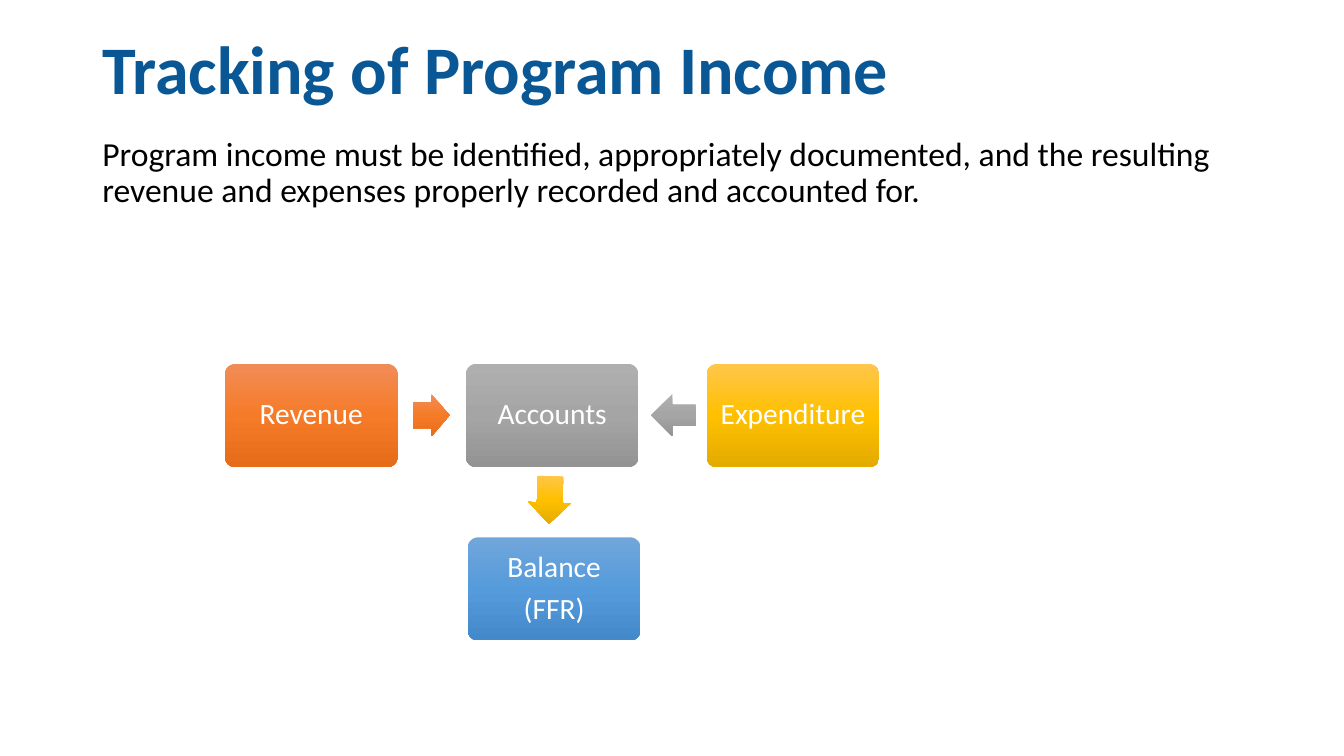
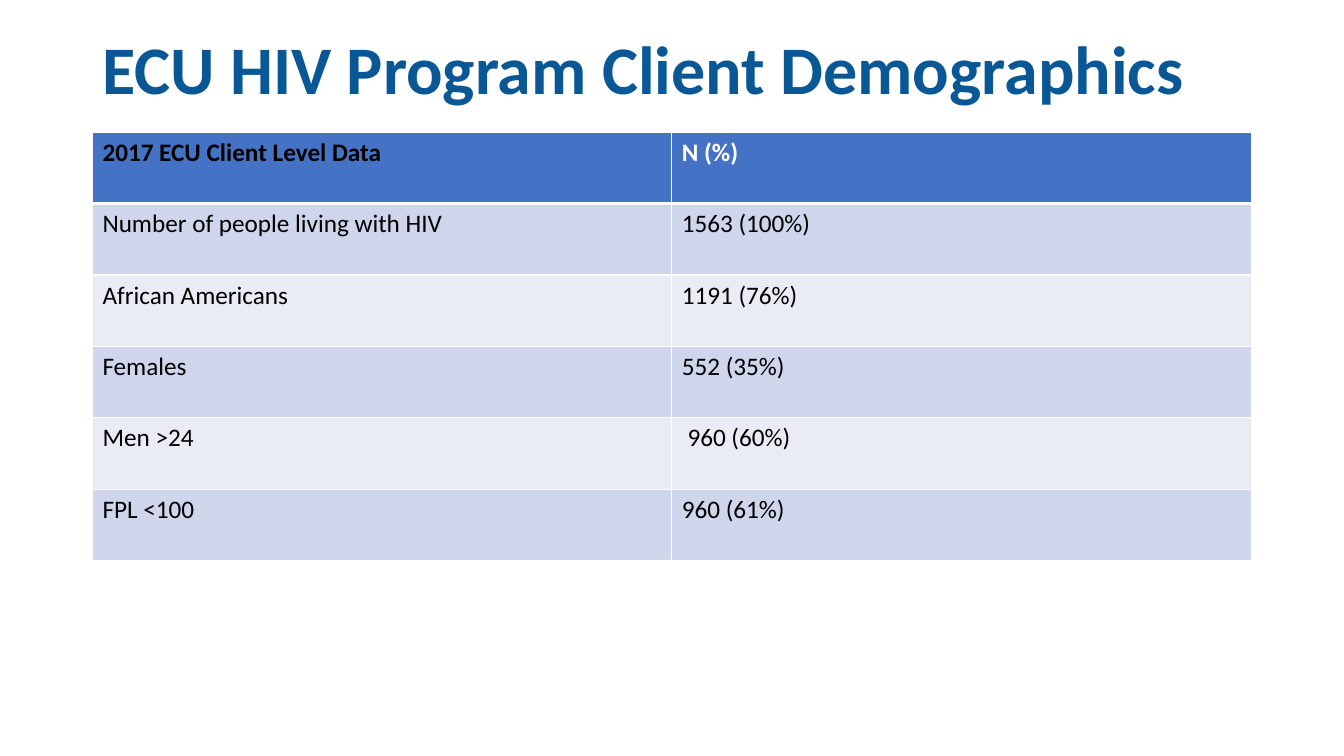
from dataclasses import dataclass

from lxml.etree import SubElement
from pptx import Presentation
from pptx.dml.color import RGBColor
from pptx.enum.shapes import MSO_SHAPE
from pptx.enum.text import MSO_ANCHOR, PP_ALIGN
from pptx.oxml.ns import qn
from pptx.util import Cm, Pt

FONT = "Calibri"
COLORS = {
    "title": "095895", "text": "000000", "white": "FFFFFF",
    "header": "4472C4", "band_dark": "CFD5EA", "band_light": "E9EBF5",
}
# Top, middle and bottom colour of each vertical gradient
GRADIENTS = {
    "orange": ("F18C57", "F67B28", "E56C19"),
    "gray": ("AFAFAF", "A5A5A5", "939393"),
    "gold": ("FFC64B", "FFC000", "E3AB00"),
    "blue": ("71A6DB", "559BDB", "448ACA"),
}

# Shared layout, in centimetres
LEFT, WIDTH = 2.33, 29.2
CONTENT_TOP = 3.33
BOX_W, BOX_H = 4.35, 2.6
BOX_LEFT, BOX_TOP, BOX_STEP = 5.67, 9.17, 6.07
ROW_H = 1.8


@dataclass
class Box:
    lines: tuple[str, ...]
    left: float
    top: float
    gradient: str


@dataclass
class Arrow:
    shape: MSO_SHAPE
    left: float
    top: float
    width: float
    height: float
    gradient: str
    shaft: float = 0.6
    rotation: float = 0


BOXES = [
    Box(("Revenue",), BOX_LEFT, BOX_TOP, "orange"),
    Box(("Accounts",), BOX_LEFT + BOX_STEP, BOX_TOP, "gray"),
    Box(("Expenditure",), BOX_LEFT + 2 * BOX_STEP, BOX_TOP, "gold"),
    Box(("Balance", "(FFR)"), 11.79, 13.54, "blue"),
]
ARROWS = [
    Arrow(MSO_SHAPE.RIGHT_ARROW, 10.41, 9.93, 0.92, 1.07, "orange"),
    Arrow(MSO_SHAPE.LEFT_ARROW, 16.41, 9.93, 1.12, 1.07, "gray", shaft=0.5),
    Arrow(MSO_SHAPE.DOWN_ARROW, 13.32, 12, 1.07, 1.2, "gold", rotation=1.8),
]
CLIENT_DATA = [
    ("2017 ECU Client Level Data", "N (%)"),
    ("Number of people living with HIV", "1563 (100%)"),
    ("African Americans", "1191 (76%)"),
    ("Females", "552 (35%)"),
    ("Men >24", " 960 (60%)"),
    ("FPL <100", "960 (61%)"),
]


def rgb(name: str) -> RGBColor:
    return RGBColor.from_string(COLORS[name])


def add_run(p, text: str, size: float, color: str, bold: bool = False) -> None:
    r = p.add_run()
    r.text = text
    r.font.name, r.font.size, r.font.bold = FONT, Pt(size), bold
    r.font.color.rgb = rgb(color)


def add_text(s, text: str, top: float, height: float, size: float, color: str,
             bold: bool = False, anchor: MSO_ANCHOR = MSO_ANCHOR.TOP) -> None:
    tf = s.shapes.add_textbox(Cm(LEFT), Cm(top), Cm(WIDTH), Cm(height)).text_frame
    tf.word_wrap = True
    tf.vertical_anchor = anchor
    p = tf.paragraphs[0]
    p.line_spacing = 0.9
    add_run(p, text, size, color, bold)


def new_slide(prs, title: str):
    s = prs.slides.add_slide(prs.slide_layouts[6])
    add_text(s, title, 0.66, 2.31, 48.6, "title", True, MSO_ANCHOR.MIDDLE)
    return s


def add_gradient_shape(s, shape: MSO_SHAPE, left: float, top: float,
                       width: float, height: float, gradient: str):
    sp = s.shapes.add_shape(shape, Cm(left), Cm(top), Cm(width), Cm(height))
    sp.shadow.inherit = False
    sp.line.fill.background()
    sp.fill.gradient()
    sp.fill.gradient_angle = 270
    # Three colour stops
    stops = sp._element.spPr.find(qn("a:gradFill")).find(qn("a:gsLst"))
    stops.clear()
    for pos, color in zip((0, 50000, 100000), GRADIENTS[gradient]):
        stop = SubElement(stops, qn("a:gs"), pos=str(pos))
        SubElement(stop, qn("a:srgbClr"), val=color)
    return sp


def add_box(s, box: Box) -> None:
    sp = add_gradient_shape(s, MSO_SHAPE.ROUNDED_RECTANGLE, box.left, box.top,
                            BOX_W, BOX_H, box.gradient)
    sp.adjustments[0] = 0.1
    tf = sp.text_frame
    tf.word_wrap = True
    tf.vertical_anchor = MSO_ANCHOR.MIDDLE
    tf.margin_left = tf.margin_right = Cm(0.2)
    for i, line in enumerate(box.lines):
        p = tf.add_paragraph() if i else tf.paragraphs[0]
        p.alignment = PP_ALIGN.CENTER
        p.line_spacing = 0.9
        p.space_after = Pt(7.35)
        add_run(p, line, 21, "white")


def add_arrow(s, arrow: Arrow) -> None:
    sp = add_gradient_shape(s, arrow.shape, arrow.left, arrow.top,
                            arrow.width, arrow.height, arrow.gradient)
    sp.adjustments[0], sp.adjustments[1] = arrow.shaft, 0.5
    sp.rotation = arrow.rotation


def set_borders(cell, top: float, bottom: float) -> None:
    tc_pr = cell._tc.get_or_add_tcPr()
    for side, width in (("L", 1), ("R", 1), ("T", top), ("B", bottom)):
        ln = SubElement(tc_pr, qn(f"a:ln{side}"), w=str(Pt(width)))
        fill = SubElement(ln, qn("a:solidFill"))
        SubElement(fill, qn("a:srgbClr"), val=COLORS["white"])


def add_client_table(s, rows: list[tuple[str, str]]) -> None:
    table = s.shapes.add_table(len(rows), 2, Cm(LEFT), Cm(CONTENT_TOP),
                               Cm(WIDTH), Cm(ROW_H * len(rows))).table
    table.first_row = table.horz_banding = False
    for i, row in enumerate(rows):
        band = "header" if i == 0 else "band_dark" if i % 2 else "band_light"
        for j, text in enumerate(row):
            cell = table.cell(i, j)
            # Heavier rule below the header
            set_borders(cell, 3 if i == 1 else 1, 3 if i == 0 else 1)
            cell.fill.solid()
            cell.fill.fore_color.rgb = rgb(band)
            color = "white" if (i, j) == (0, 1) else "text"
            add_run(cell.text_frame.paragraphs[0], text, 18, color, i == 0)


def main() -> None:
    prs = Presentation()
    prs.slide_width, prs.slide_height = Cm(33.87), Cm(19.05)

    # Program income flow
    s = new_slide(prs, "Tracking of Program Income")
    add_text(s, "Program income must be identified, appropriately documented, and "
             "the resulting revenue and expenses properly recorded and accounted for.",
             CONTENT_TOP, 12.34, 24, "text")
    for box in BOXES:
        add_box(s, box)
    for arrow in ARROWS:
        add_arrow(s, arrow)

    # Client demographics table
    s = new_slide(prs, "ECU HIV Program Client Demographics")
    add_client_table(s, CLIENT_DATA)

    prs.save("out.pptx")


if __name__ == "__main__":
    main()
